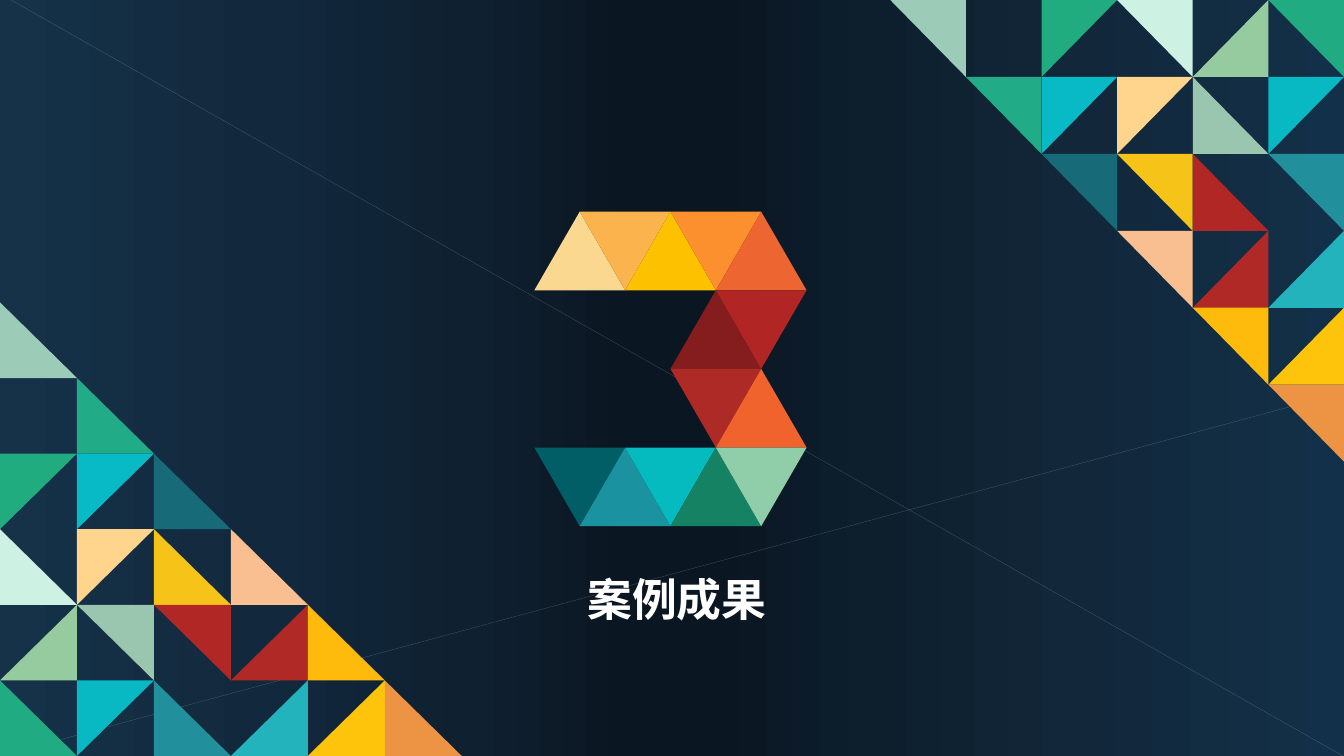
from lxml import etree
from pptx import Presentation
from pptx import util as u
from pptx.dml import color
from pptx.enum import shapes, text
from pptx.oxml import ns

BACKDROP = [(0, "123049"), (20, "12273A"), (35, "0D1F2D"), (47, "0A1622"), (53, "0A1622"),
            (65, "0F2030"), (80, "12283D"), (100, "153249")]

FLIPS = {"bl": (), "br": ("flipH",), "tl": ("flipV",), "tr": ("flipH", "flipV")}
TRANSPOSED = {"bl": "tr", "tr": "bl", "br": "br", "tl": "tl"}
MOSAIC = [
    ["9CCCB8 bl"],
    [None, "21AB87 bl"],
    ["20AC7E tl", "08BAC5 tl", "176A78 bl"],
    ["CDF2E4 bl", "FFD48D tl", "F6C319 bl", "FABF91 bl"],
    ["96CBA0 br", "9AC5AF tr", "B02725 tr", "B12926 br", "FFBB0C bl"],
    ["21AB82 bl", "08B8C2 tl", "22909C bl", "23B3BD br", "FEC30B br", "ED9444 bl"],
]

NUMERAL = [
    (0, ["FAD88F", "FBB34D", "FDC100", "FC902E", "ED6531"]),
    (3, ["851C1E", "B12524"]),
    (3, ["AE2A27", "F0632C"]),
    (0, ["015E66", "1B929F", "05BBBF", "158363", "8FCEA9"]),
]


def rgb(hex_code):
    """Turn a hex string into a colour."""
    return color.RGBColor.from_string(hex_code)


def add_triangle(slide, kind, box, fill, flips=()):
    """Place one flat triangle in a box given in inches."""
    triangle = slide.shapes.add_shape(kind, *map(u.Inches, box))
    triangle.shadow.inherit = False
    triangle.fill.solid()
    triangle.fill.fore_color.rgb = rgb(fill)
    triangle.line.fill.background()
    for flip in flips:
        triangle._element.spPr.find(ns.qn("a:xfrm")).set(flip, "1")


def add_label(slide, words, box, size, ink, font, bold=False, align=text.PP_ALIGN.CENTER):
    """Write a line of text in a box given in inches."""
    frame = slide.shapes.add_textbox(*map(u.Inches, box)).text_frame
    frame.word_wrap = True
    line = frame.paragraphs[0]
    line.alignment = align
    run = line.add_run()
    run.text = words
    run.font.size = u.Pt(size)
    run.font.bold = bold
    run.font.name = font
    run.font.color.rgb = rgb(ink)
    east_asian = etree.SubElement(run.font._element, ns.qn("a:ea"))
    east_asian.set("typeface", font)


def paint_backdrop(slide):
    """Fill the background with a dark band between two blue sides."""
    fill = slide.background.fill
    fill.gradient()
    fill.gradient_angle = 180
    stops = slide._element.find(".//" + ns.qn("a:gsLst"))
    for stop in list(stops):
        stops.remove(stop)
    for percent, shade in BACKDROP:
        stop = etree.SubElement(stops, ns.qn("a:gs"), pos=str(percent * 1000))
        etree.SubElement(stop, ns.qn("a:srgbClr"), val=shade)


def draw_ray(slide, start, end):
    """Draw a faint hairline across the slide."""
    ray = slide.shapes.add_connector(shapes.MSO_CONNECTOR.STRAIGHT, *map(u.Inches, start + end))
    ray.line.width = u.Pt(0.25)
    ray.line.color.rgb = rgb("D9D9D9")
    shade = ray._element.find(".//" + ns.qn("a:srgbClr"))
    etree.SubElement(shade, ns.qn("a:alpha"), val="25000")
    etree.SubElement(ray._element.spPr, ns.qn("a:effectLst"))


def draw_mosaic(slide, box, transposed=False):
    """Tile a corner box with right triangles, optionally mirrored over the diagonal."""
    left, top, width, height = box
    tile_width, tile_height = width / len(MOSAIC), height / len(MOSAIC)
    for row, tiles in enumerate(MOSAIC):
        for column, tile in enumerate(tiles):
            if tile is None:
                continue
            fill, corner = tile.split()
            x, y = column, row
            if transposed:
                x, y, corner = row, column, TRANSPOSED[corner]
            place = (left + x * tile_width, top + y * tile_height, tile_width, tile_height)
            add_triangle(slide, shapes.MSO_SHAPE.RIGHT_TRIANGLE, place, fill, FLIPS[corner])


def draw_numeral(slide, box):
    """Build the figure three from rows of alternating triangles."""
    left, top, width, height = box
    half, row_height = width / 6, height / len(NUMERAL)
    for row, (first, fills) in enumerate(NUMERAL):
        for step, fill in enumerate(fills, first):
            place = (left + step * half, top + row * row_height, 2 * half, row_height)
            flips = ("flipV",) if (row + step) % 2 else ()
            add_triangle(slide, shapes.MSO_SHAPE.ISOSCELES_TRIANGLE, place, fill, flips)


def build_section_slide(deck):
    """Compose the section divider."""
    slide = deck.slides.add_slide(deck.slide_layouts[6])
    paint_backdrop(slide)
    draw_ray(slide, (0.11, 0), (13.32, 7.5))
    draw_ray(slide, (0, 7.5), (13.33, 3.89))
    draw_mosaic(slide, (0, 3, 4.58, 4.5))
    draw_mosaic(slide, (8.83, 0, 4.5, 4.58), transposed=True)
    draw_numeral(slide, (5.3, 2.1, 2.7, 3.12))
    add_label(slide, "案例成果", (3.39, 5.62, 6.65, 0.67), size=32, ink="FFFFFF",
              font="Noto Sans CJK SC", bold=True)


def main():
    """Create and save the deck."""
    deck = Presentation()
    deck.slide_width, deck.slide_height = u.Inches(13.33), u.Inches(7.5)
    build_section_slide(deck)
    deck.save("out.pptx")


if __name__ == "__main__":
    main()
